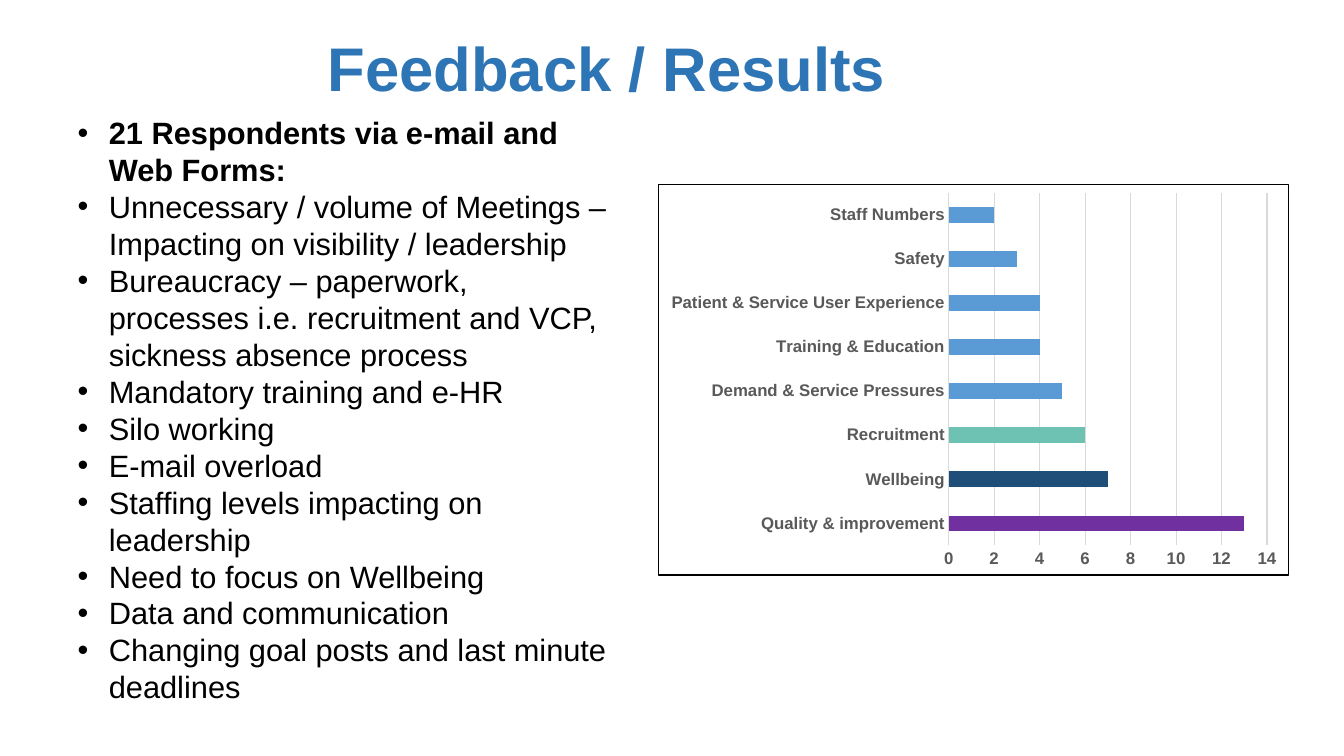
import pptx
import pptx.chart.data
import pptx.dml.color
import pptx.enum.chart
import pptx.enum.text
import pptx.oxml
import pptx.oxml.ns
import pptx.util

RGBColor = pptx.dml.color.RGBColor
BLACK = RGBColor(0x00, 0x00, 0x00)
TITLE_BLUE = RGBColor(0x2E, 0x75, 0xB6)
LABEL_GREY = RGBColor(0x59, 0x59, 0x59)
GRID_GREY = RGBColor(0xD9, 0xD9, 0xD9)
BAR_BLUE = RGBColor(0x5B, 0x9B, 0xD5)
PURPLE = RGBColor(0x70, 0x30, 0xA0)
NAVY = RGBColor(0x1F, 0x4E, 0x79)
TEAL = RGBColor(0x6E, 0xC2, 0xB4)

FONT = "Arial"
EMU_PER_PX = 9144

FEEDBACK = [
    "21 Respondents via e-mail and Web Forms:",
    "Unnecessary / volume of Meetings – Impacting on visibility / leadership",
    "Bureaucracy – paperwork, processes i.e. recruitment and VCP, sickness absence process",
    "Mandatory training and e-HR",
    "Silo working",
    "E-mail overload",
    "Staffing levels impacting on leadership",
    "Need to focus on Wellbeing",
    "Data and communication",
    "Changing goal posts and last minute deadlines",
]
THEMES = {
    "Quality & improvement": 13,
    "Wellbeing": 7,
    "Recruitment": 6,
    "Demand & Service Pressures": 5,
    "Training & Education": 4,
    "Patient & Service User Experience": 4,
    "Safety": 3,
    "Staff Numbers": 2,
}
TOP_THEME_COLORS = [PURPLE, NAVY, TEAL]


def px(n):
    return pptx.util.Emu(n * EMU_PER_PX)


def place(sp, x, y, w, h):
    sp.left, sp.top, sp.width, sp.height = px(x), px(y), px(w), px(h)


def style_font(font, size, color, bold=False):
    font.name = FONT
    font.size = pptx.util.Pt(size)
    font.bold = bold
    font.color.rgb = color


def style_line(line, color):
    line.color.rgb = color
    line.width = pptx.util.Pt(0.75)


def fill_title(sp, text):
    place(sp, 27, 13, 1150, 116)
    tf = sp.text_frame
    tf.text = text
    tf.vertical_anchor = pptx.enum.text.MSO_ANCHOR.MIDDLE
    p = tf.paragraphs[0]
    p.alignment = pptx.enum.text.PP_ALIGN.CENTER
    p.line_spacing = 0.9
    style_font(p.runs[0].font, 44, TITLE_BLUE, True)


def fill_list(sp, items):
    place(sp, 67, 108, 546, 670)
    tf = sp.text_frame
    tf.text = "\n".join(items)
    tf.auto_size = pptx.enum.text.MSO_AUTO_SIZE.NONE
    for i, p in enumerate(tf.paragraphs):
        pPr = p._p.get_or_add_pPr()
        pPr.set("marL", str(px(31)))
        pPr.set("indent", str(px(-31)))
        pPr.append(pptx.oxml.parse_xml(
            f'<a:buChar {pptx.oxml.ns.nsdecls("a")} char="•"/>'))
        p.space_before = pptx.util.Pt(0)
        p.line_spacing = 1.0
        style_font(p.runs[0].font, 22, BLACK, i == 0)


def style_axis(axis):
    axis.major_tick_mark = pptx.enum.chart.XL_TICK_MARK.NONE
    axis.minor_tick_mark = pptx.enum.chart.XL_TICK_MARK.NONE
    style_font(axis.tick_labels.font, 12, LABEL_GREY, True)


def add_border(chart, color):
    ns = pptx.oxml.ns.nsdecls("c", "a")
    border = pptx.oxml.parse_xml(
        f'<c:spPr {ns}><a:noFill/><a:ln w="9525"><a:solidFill>'
        f'<a:srgbClr val="{color}"/></a:solidFill></a:ln></c:spPr>')
    chart._chartSpace.find(pptx.oxml.ns.qn("c:chart")).addnext(border)


def add_theme_chart(s, themes):
    data = pptx.chart.data.CategoryChartData()
    data.categories = list(themes)
    data.add_series("Series 1", list(themes.values()))
    chart = s.shapes.add_chart(
        pptx.enum.chart.XL_CHART_TYPE.BAR_CLUSTERED,
        px(653), px(183), px(626), px(388), data).chart
    chart.has_legend = False
    chart.has_title = False
    style_font(chart.font, 10, BLACK)
    add_border(chart, BLACK)

    plot = chart.plots[0]
    plot.gap_width = 182
    plot.vary_by_categories = False
    series = plot.series[0]
    series.format.fill.solid()
    series.format.fill.fore_color.rgb = BAR_BLUE
    for i, color in enumerate(TOP_THEME_COLORS):
        fill = series.points[i].format.fill
        fill.solid()
        fill.fore_color.rgb = color

    style_axis(chart.category_axis)
    style_line(chart.category_axis.format.line, GRID_GREY)
    axis = chart.value_axis
    style_axis(axis)
    axis.minimum_scale, axis.maximum_scale, axis.major_unit = 0, 14, 2
    axis.format.line.fill.background()
    style_line(axis.major_gridlines.format.line, GRID_GREY)


def main():
    prs = pptx.Presentation()
    prs.slide_width, prs.slide_height = px(1333), px(750)
    s = prs.slides.add_slide(prs.slide_layouts[1])
    fill_title(s.shapes.title, "Feedback / Results")
    add_theme_chart(s, THEMES)
    fill_list(s.placeholders[1], FEEDBACK)
    prs.save("out.pptx")


if __name__ == "__main__":
    main()
